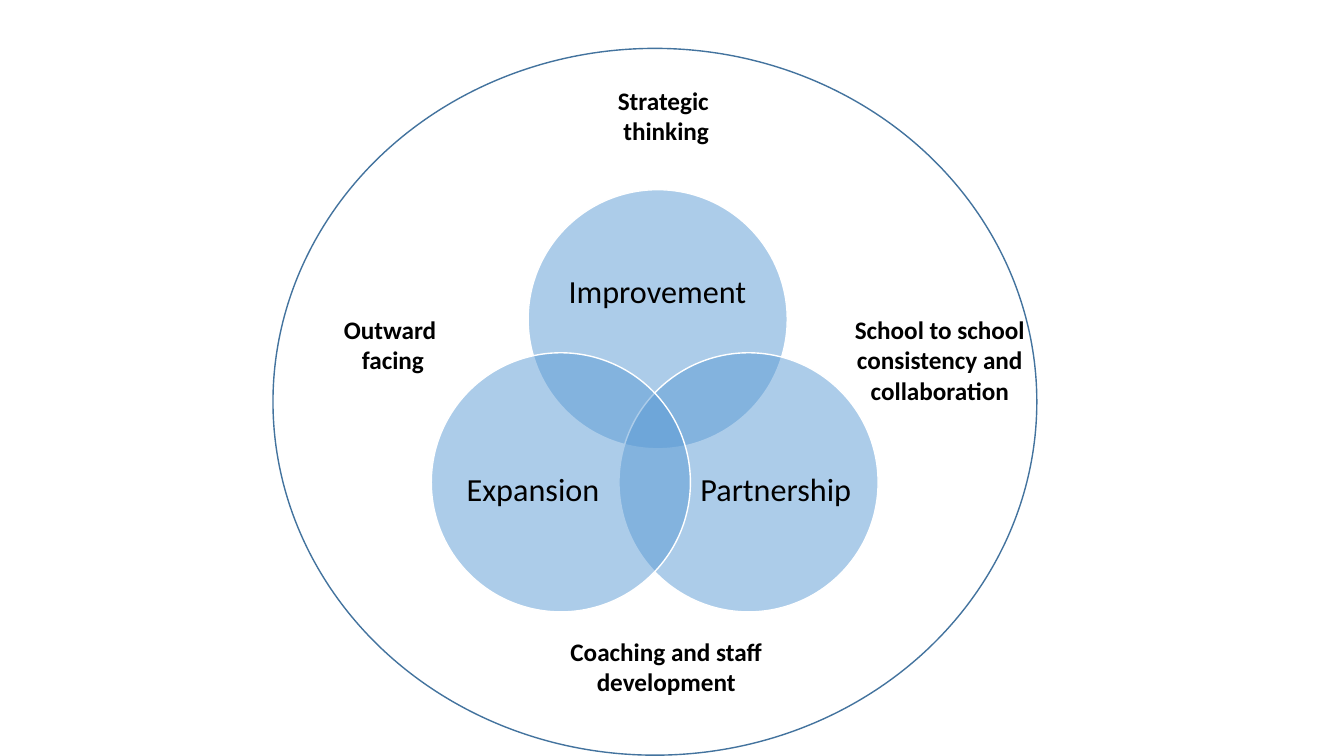
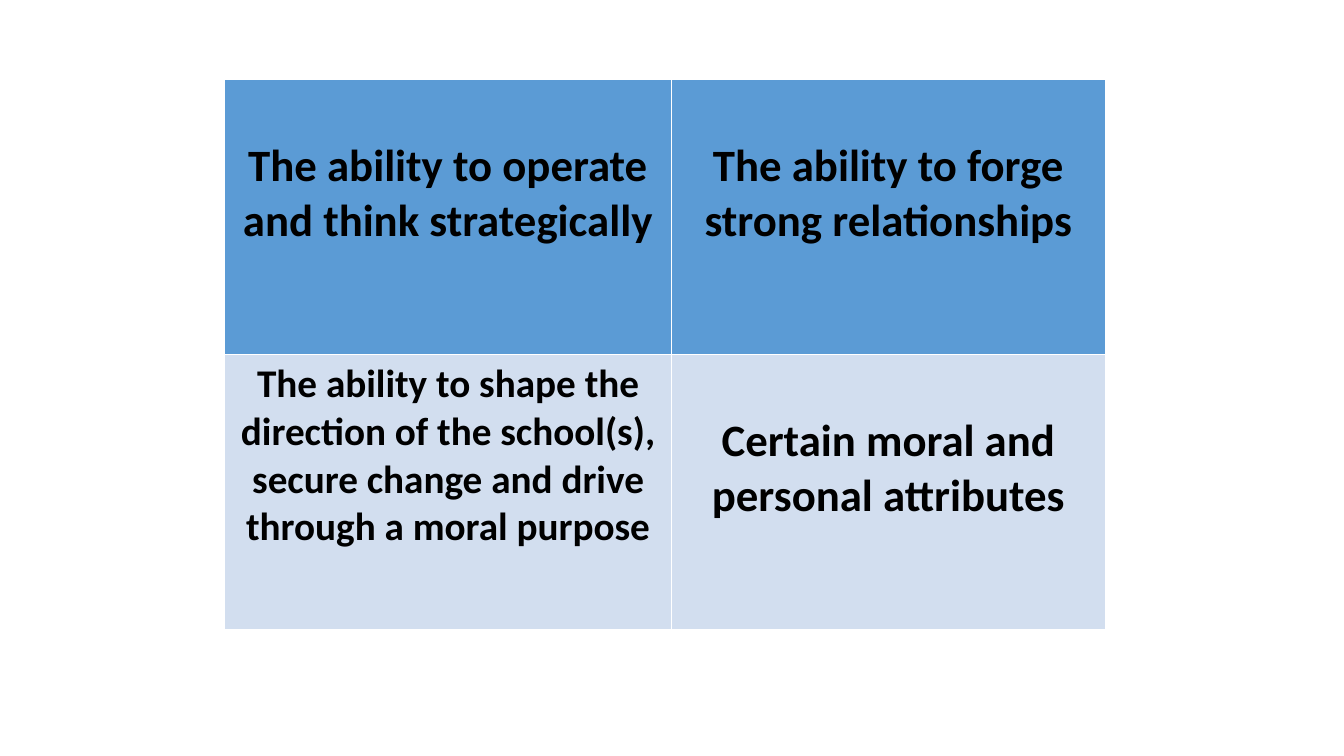
from pptx import Presentation
from pptx.dml.color import RGBColor
from pptx.enum.shapes import MSO_SHAPE
from pptx.enum.text import MSO_ANCHOR, PP_ALIGN
from pptx.oxml.xmlchemy import OxmlElement
from pptx.util import Cm, Pt

OVAL = MSO_SHAPE.OVAL
MIDDLE, TOP = MSO_ANCHOR.MIDDLE, MSO_ANCHOR.TOP
CENTER = PP_ALIGN.CENTER

FONT = "Calibri"
COLORS = {"text": "000000", "white": "FFFFFF", "outline": "43739E",
          "blue": "5B9BD5", "pale": "D2DEEF"}

RING = (6.88, 1.22, 19.25, 17.81)
DIAMETER = 6.53
CIRCLES = [
    ("Improvement", (13.31, 4.78), (14.17, 5.92, 4.8, 2.95)),
    ("Partnership", (15.6, 8.89), (17.6, 10.57, 3.91, 3.61)),
    ("Expansion", (10.87, 8.89), (11.48, 10.57, 3.91, 3.61)),
]
LABELS = [
    (["School to school consistency and collaboration"], (20.09, 7.8, 7.19, 2.57)),
    (["Outward", " facing"], (6.53, 7.8, 6.6, 1.8)),
    (["Strategic ", "thinking"], (13.49, 2.03, 6.6, 1.8)),
    (["Coaching and staff development"], (13.49, 15.9, 6.6, 1.8)),
]

TABLE_LEFT, TABLE_TOP = 5.65, 2.01
COL_WIDTHS = [11.28, 10.92]
ROW_HEIGHT = 6.93
ROW_FILLS = ["blue", "pale"]
SMALL_TOP, LARGE_TOP = 0.13, 1.5
ABILITIES = [
    [("The ability to operate and think strategically", 32, LARGE_TOP),
     ("The ability to forge strong relationships", 32, LARGE_TOP)],
    [("The ability to shape the direction of the school(s), secure change "
      "and drive through a moral purpose", 28, SMALL_TOP),
     ("Certain moral and personal attributes", 32, LARGE_TOP)],
]


def rgb(name):
    return RGBColor.from_string(COLORS[name])


def write(tf, lines, size, bold=False, spacing=None):
    for i, line in enumerate(lines):
        p = tf.paragraphs[0] if i == 0 else tf.add_paragraph()
        p.alignment = CENTER
        if spacing:
            p.line_spacing = spacing
        r = p.add_run()
        r.text = line
        r.font.name = FONT
        r.font.size = Pt(size)
        r.font.bold = bold
        r.font.color.rgb = rgb("text")


def add_oval(s, box, fill, line, opacity=None):
    sp = s.shapes.add_shape(OVAL, *map(Cm, box))
    sp.shadow.inherit = False
    sp.fill.solid()
    sp.fill.fore_color.rgb = rgb(fill)
    sp.line.color.rgb = rgb(line)
    sp.line.width = Pt(1)
    if opacity:
        alpha = OxmlElement("a:alpha")
        alpha.set("val", str(opacity * 1000))
        sp.fill._xPr.find(".//{*}srgbClr").append(alpha)


def add_text(s, box, lines, size, bold=False, anchor=TOP, inset=True, spacing=None):
    tf = s.shapes.add_textbox(*map(Cm, box)).text_frame
    tf.word_wrap = True
    tf.vertical_anchor = anchor
    if not inset:
        tf.margin_left = tf.margin_right = tf.margin_top = tf.margin_bottom = 0
    write(tf, lines, size, bold, spacing)


def build_venn(s):
    add_oval(s, RING, "white", "outline")
    for name, corner, text_box in CIRCLES:
        add_oval(s, (*corner, DIAMETER, DIAMETER), "blue", "white", opacity=50)
        add_text(s, text_box, [name], 23, anchor=MIDDLE, inset=False, spacing=0.9)
    for lines, box in LABELS:
        add_text(s, box, lines, 18, bold=True)


def build_abilities(s):
    box = (TABLE_LEFT, TABLE_TOP, sum(COL_WIDTHS), ROW_HEIGHT * len(ABILITIES))
    table = s.shapes.add_table(len(ABILITIES), len(COL_WIDTHS), *map(Cm, box)).table
    for column, width in zip(table.columns, COL_WIDTHS):
        column.width = Cm(width)
    for i, (abilities, fill) in enumerate(zip(ABILITIES, ROW_FILLS)):
        table.rows[i].height = Cm(ROW_HEIGHT)
        for j, (text, size, top) in enumerate(abilities):
            cell = table.cell(i, j)
            cell.fill.solid()
            cell.fill.fore_color.rgb = rgb(fill)
            cell.margin_top = Cm(top)
            write(cell.text_frame, [text], size, bold=True)


def main():
    prs = Presentation()
    prs.slide_width, prs.slide_height = Cm(33.87), Cm(19.05)
    blank = prs.slide_layouts[6]
    for build in (build_venn, build_abilities):
        build(prs.slides.add_slide(blank))
    prs.save("out.pptx")


if __name__ == "__main__":
    main()
